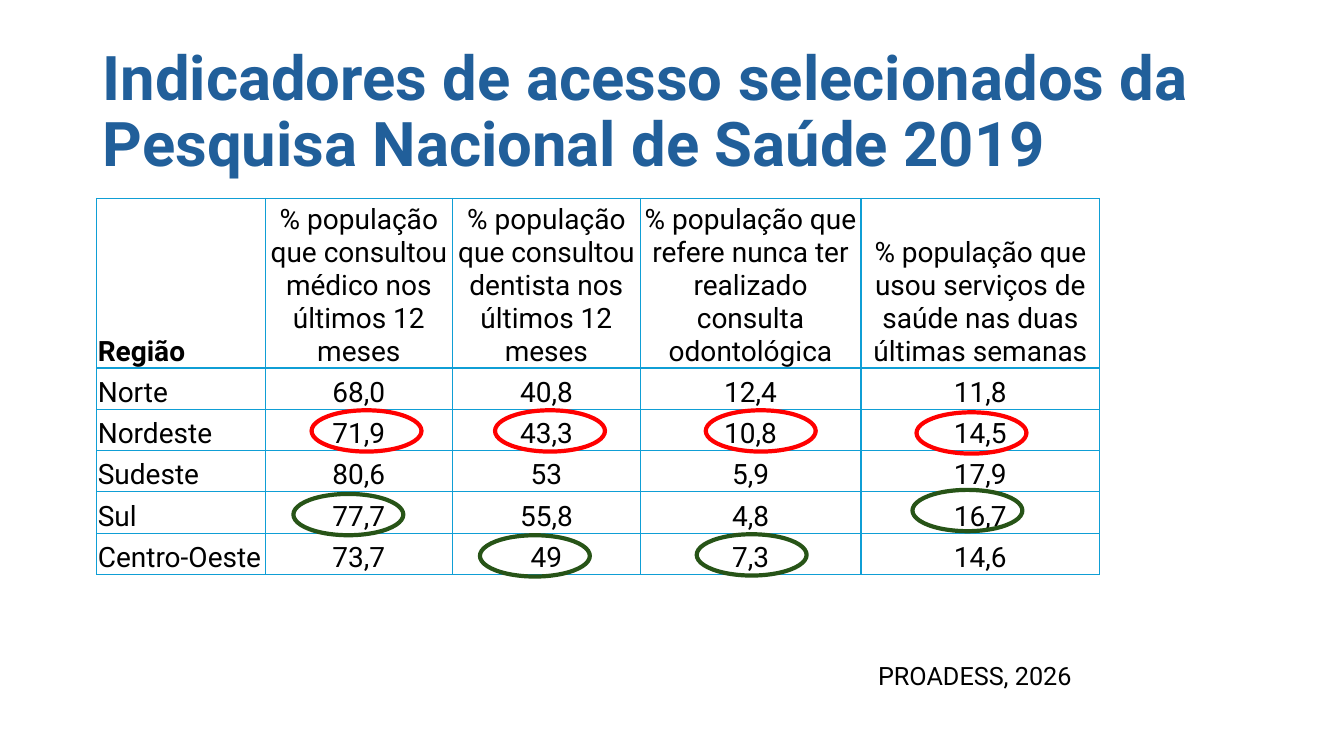
import pptx
import pptx.dml.color
import pptx.enum.shapes
import pptx.enum.text
import pptx.oxml
import pptx.oxml.ns
import pptx.util
from pptx.util import Inches

COLORS = {"title": "215F9A", "text": "000000", "border": "0F9ED5",
          "red": "FF0000", "green": "275417"}
FONT = "Roboto"
ALIGN = pptx.enum.text.PP_ALIGN
ANCHOR = pptx.enum.text.MSO_ANCHOR

HEADERS = [
    "Região",
    "% população que consultou médico nos últimos 12 meses",
    "% população que consultou dentista nos últimos 12 meses",
    "% população que refere nunca ter realizado consulta odontológica",
    "% população que usou serviços de saúde nas duas últimas semanas",
]
REGIONS = [
    ["Norte", "68,0", "40,8", "12,4", "11,8"],
    ["Nordeste", "71,9", "43,3", "10,8", "14,5"],
    ["Sudeste", "80,6", "53", "5,9", "17,9"],
    ["Sul", "77,7", "55,8", "4,8", "16,7"],
    ["Centro-Oeste", "73,7", "49", "7,3", "14,6"],
]
COL_WIDTHS = [1.67, 1.86, 1.86, 2.19, 2.37]
HEADER_HEIGHT, ROW_HEIGHT = 1.68, 0.41
HIGHLIGHTS = {
    "red": [(3.09, 4.07), (4.91, 4.07), (7, 4.07), (9.09, 4.09)],
    "green": [(2.91, 4.9), (4.76, 5.31), (6.91, 5.3), (9.05, 4.86)],
}


def rgb(name):
    return pptx.dml.color.RGBColor.from_string(COLORS[name])


def write(tf, text, size=20, color="text", bold=False, align=ALIGN.LEFT, spacing=None):
    tf.word_wrap = True
    p = tf.paragraphs[0]
    p.alignment = align
    if spacing:
        p.line_spacing = spacing
    r = p.add_run()
    r.text = text
    r.font.name = FONT
    r.font.size = pptx.util.Pt(size)
    r.font.bold = bold
    r.font.color.rgb = rgb(color)


def set_borders(cell, **widths):
    """Draw the cell edges L, R, T and B with the given widths in points."""
    tcPr = cell._tc.get_or_add_tcPr()
    for i, (edge, width) in enumerate(widths.items()):
        tcPr.insert(i, pptx.oxml.parse_xml(
            f'<a:ln{edge} {pptx.oxml.ns.nsdecls("a")} w="{pptx.util.Pt(width)}">'
            f'<a:solidFill><a:srgbClr val="{COLORS["border"]}"/></a:solidFill>'
            f'</a:ln{edge}>'))


class SlideBuilder:
    def __init__(self, prs):
        self.s = prs.slides.add_slide(prs.slide_layouts[6])

    def text(self, left, top, width, height, text, anchor=ANCHOR.TOP, **style):
        sp = self.s.shapes.add_textbox(*map(Inches, (left, top, width, height)))
        sp.text_frame.vertical_anchor = anchor
        write(sp.text_frame, text, **style)

    def table(self, left, top, rows):
        heights = [HEADER_HEIGHT] + [ROW_HEIGHT] * (len(rows) - 1)
        size = sum(COL_WIDTHS), sum(heights)
        table = self.s.shapes.add_table(
            len(rows), len(COL_WIDTHS), *map(Inches, (left, top, *size))).table
        table.first_row = table.horz_banding = False
        for column, width in zip(table.columns, COL_WIDTHS):
            column.width = Inches(width)
        for i, (row, height) in enumerate(zip(rows, heights)):
            table.rows[i].height = Inches(height)
            for j, text in enumerate(row):
                self.cell(table.cell(i, j), text, i, j)

    def cell(self, cell, text, i, j):
        cell.margin_left = cell.margin_right = cell.margin_top = Inches(0.01)
        cell.margin_bottom = 0
        cell.vertical_anchor = ANCHOR.BOTTOM
        cell.fill.background()
        set_borders(cell, L=1, R=1, T=2 if i == 1 else 1, B=2 if i == 0 else 1)
        write(cell.text_frame, text, bold=i == j == 0,
              align=ALIGN.CENTER if j else ALIGN.LEFT)

    def highlight(self, left, top, color):
        sp = self.s.shapes.add_shape(pptx.enum.shapes.MSO_SHAPE.OVAL,
                                     *map(Inches, (left, top, 1.09, 0.41)))
        sp.shadow.inherit = False
        sp.fill.background()
        sp.line.color.rgb = rgb(color)
        sp.line.width = pptx.util.Pt(3)


def main():
    prs = pptx.Presentation()
    prs.slide_width, prs.slide_height = Inches(13.33), Inches(7.5)
    slide = SlideBuilder(prs)
    slide.text(0.92, 0.4, 11.5, 1.45,
               "Indicadores de acesso selecionados da Pesquisa Nacional de Saúde 2019",
               anchor=ANCHOR.MIDDLE, size=44, color="title", bold=True, spacing=0.9)
    slide.text(8.61, 6.5, 3.52, 0.4, "PROADESS, 2026", size=18)
    slide.table(0.96, 1.97, [HEADERS] + REGIONS)
    for color, places in HIGHLIGHTS.items():
        for left, top in places:
            slide.highlight(left, top, color)
    prs.save("out.pptx")


if __name__ == "__main__":
    main()
